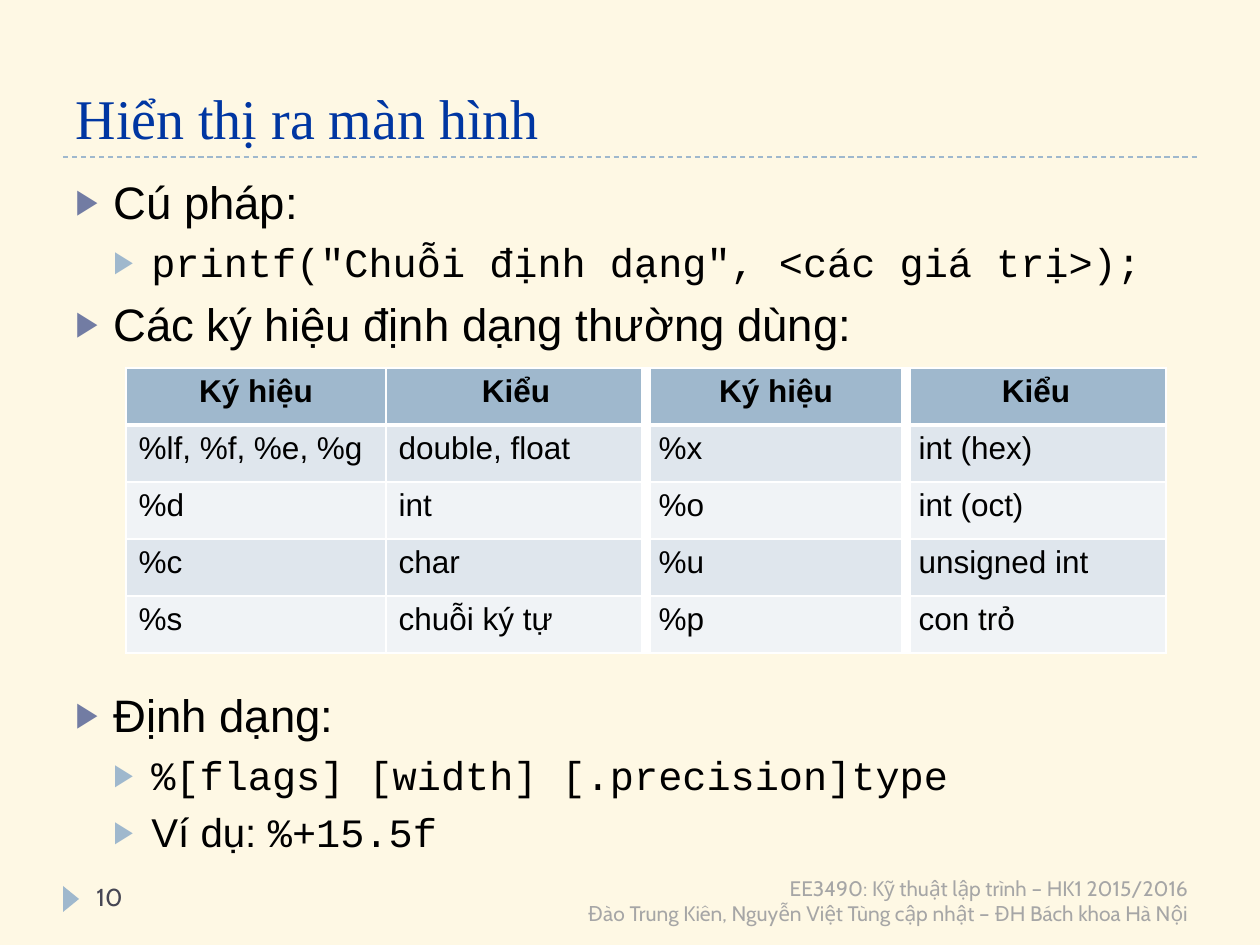
from lxml import etree
from pptx import Presentation
from pptx import util as u
from pptx.dml.color import RGBColor
from pptx.enum import dml, shapes, text
from pptx.oxml.ns import qn

PX = 914400 / 126
HUES = {"page": "FEF8E4", "title": "0036A2", "text": "000000", "blue": "9FB8CD",
        "mauve": "727CA3", "band": "DFE6ED", "pale": "F0F3F6", "white": "FFFFFF",
        "page no": "464653", "foot": "A6A6A6"}
SANS, MONO, SERIF, CABIN = "Arial", "Courier New", "Times New Roman", "Cabin"
LEVELS = [(26, 6, 38, "mauve"), (23, 5, 76, "blue")]
SYNTAX = [(0, [("Cú pháp:", SANS)]),
          (1, [('printf("Chuỗi định dạng", <các giá trị>);', MONO)]),
          (0, [("Các ký hiệu định dạng thường dùng:", SANS)])]
FORMAT = [(0, [("Định dạng:", SANS)]),
          (1, [("%[flags] [width] [.precision]type", MONO)]),
          (1, [("Ví dụ: ", SANS), ("%+15.5f", MONO)])]
ROWS = [("Ký hiệu", "Kiểu", "Ký hiệu", "Kiểu"),
        ("%lf, %f, %e, %g", "double, float", "%x", "int (hex)"),
        ("%d", "int", "%o", "int (oct)"),
        ("%c", "char", "%u", "unsigned int"),
        ("%s", "chuỗi ký tự", "%p", "con trỏ")]
FOOT = ["EE3490: Kỹ thuật lập trình – HK1 2015/2016",
        "Đào Trung Kiên, Nguyễn Việt Tùng cập nhật – ĐH Bách khoa Hà Nội"]


def px(n):
    """Turn pixels into EMU."""
    return u.Emu(round(n * PX))


def hue(name):
    """Look up a colour."""
    return RGBColor.from_string(HUES[name])


def add_run(para, words, font, size, color, bold=False):
    """Add one formatted run."""
    run = para.add_run()
    run.text = words
    run.font.name, run.font.size, run.font.bold = font, u.Pt(size), bold
    run.font.color.rgb = hue(color)


def add_paras(frame, count):
    """Give the frame this many paragraphs."""
    return [frame.paragraphs[0]] + [frame.add_paragraph() for _ in range(count - 1)]


def add_box(slide, *box):
    """Add a wrapping text box and return its frame."""
    frame = slide.shapes.add_textbox(*map(px, box)).text_frame
    frame.word_wrap = True
    return frame


def add_title(slide, words):
    """Place and fill the title."""
    title = slide.shapes.title
    title.left, title.top, title.width, title.height = map(px, (63, 21, 1134, 136))
    frame = title.text_frame
    frame.vertical_anchor = text.MSO_ANCHOR.BOTTOM
    para = frame.paragraphs[0]
    para.alignment = text.PP_ALIGN.LEFT
    add_run(para, words, SERIF, 32, "title")


def add_rule(slide):
    """Draw the dashed rule under the title."""
    rule = slide.shapes.add_connector(
        shapes.MSO_CONNECTOR.STRAIGHT, *map(px, (63, 157, 1197, 157)))
    rule.line.color.rgb = hue("blue")
    rule.line.width = u.Pt(0.75)
    rule.line.dash_style = dml.MSO_LINE.DASH
    etree.SubElement(rule._element.spPr, qn("a:effectLst"))


def add_mark(slide):
    """Draw the triangle beside the page number."""
    mark = slide.shapes.add_shape(
        shapes.MSO_SHAPE.ISOSCELES_TRIANGLE, *map(px, (58, 891, 26, 16)))
    mark.rotation = 90
    mark.shadow.inherit = False
    mark.fill.solid()
    mark.fill.fore_color.rgb = hue("blue")
    mark.line.fill.background()


def add_bullet(para, color, indent):
    """Give a paragraph a coloured arrow bullet and hanging indent."""
    props = para._p.get_or_add_pPr()
    props.set("marL", str(px(indent)))
    props.set("indent", str(px(-38)))
    tint = etree.SubElement(props, qn("a:buClr"))
    etree.SubElement(tint, qn("a:srgbClr"), val=HUES[color])
    etree.SubElement(props, qn("a:buSzPct"), val="76000")
    etree.SubElement(props, qn("a:buFont"), typeface=SANS)
    etree.SubElement(props, qn("a:buChar"), char="▶")


def add_list(slide, box, items):
    """Add a two-level bulleted list."""
    paras = add_paras(add_box(slide, *box), len(items))
    for i, (para, (level, runs)) in enumerate(zip(paras, items)):
        size, gap, indent, color = LEVELS[level]
        para.level = level
        add_bullet(para, color, indent)
        para.space_before = u.Pt(gap if i else 0)
        for words, font in runs:
            add_run(para, words, font, size, "text")


def add_edges(cell, widths):
    """Draw white cell borders: left, right, top, bottom."""
    props = cell._tc.get_or_add_tcPr()
    for side, width in zip("LRTB", widths):
        line = etree.SubElement(props, qn("a:ln" + side), w=str(u.Pt(width)))
        fill = etree.SubElement(line, qn("a:solidFill"))
        etree.SubElement(fill, qn("a:srgbClr"), val=HUES["white"])


def add_grid(slide):
    """Add the table of format symbols."""
    grid = slide.shapes.add_table(
        len(ROWS), len(ROWS[0]), *map(px, (126, 368, 1040, 285))).table
    grid.horz_banding = False
    for row in grid.rows:
        row.height = px(57)
    for col in grid.columns:
        col.width = px(260)
    for r, row in enumerate(ROWS):
        for c, words in enumerate(row):
            cell = grid.cell(r, c)
            add_edges(cell, (6 if c > 1 else 1, 6 if c in (1, 2) else 1,
                             3 if r == 1 else 1, 3 if r == 0 else 1))
            cell.fill.solid()
            cell.fill.fore_color.rgb = hue(
                "blue" if r == 0 else "band" if r % 2 else "pale")
            para = cell.text_frame.paragraphs[0]
            para.alignment = text.PP_ALIGN.LEFT if r else text.PP_ALIGN.CENTER
            add_run(para, words, SANS, 18, "text", r == 0)


def add_foot(slide):
    """Add the page number and the footer."""
    add_run(add_box(slide, 84, 876, 273, 50).paragraphs[0], "10", CABIN, 14, "page no")
    frame = add_box(slide, 431, 876, 770, 50)
    frame.vertical_anchor = text.MSO_ANCHOR.MIDDLE
    for para, words in zip(add_paras(frame, len(FOOT)), FOOT):
        para.alignment = text.PP_ALIGN.RIGHT
        add_run(para, words, CABIN, 12, "foot")


def main():
    """Build the slide."""
    deck = Presentation()
    deck.slide_width, deck.slide_height = px(1260), px(945)
    slide = deck.slides.add_slide(deck.slide_layouts[5])
    slide.background.fill.solid()
    slide.background.fill.fore_color.rgb = hue("page")
    add_rule(slide)
    add_mark(slide)
    add_title(slide, "Hiển thị ra màn hình")
    add_list(slide, (63, 168, 1134, 190), SYNTAX)
    add_list(slide, (63, 681, 1134, 190), FORMAT)
    add_grid(slide)
    add_foot(slide)
    deck.save("out.pptx")


if __name__ == "__main__":
    main()
